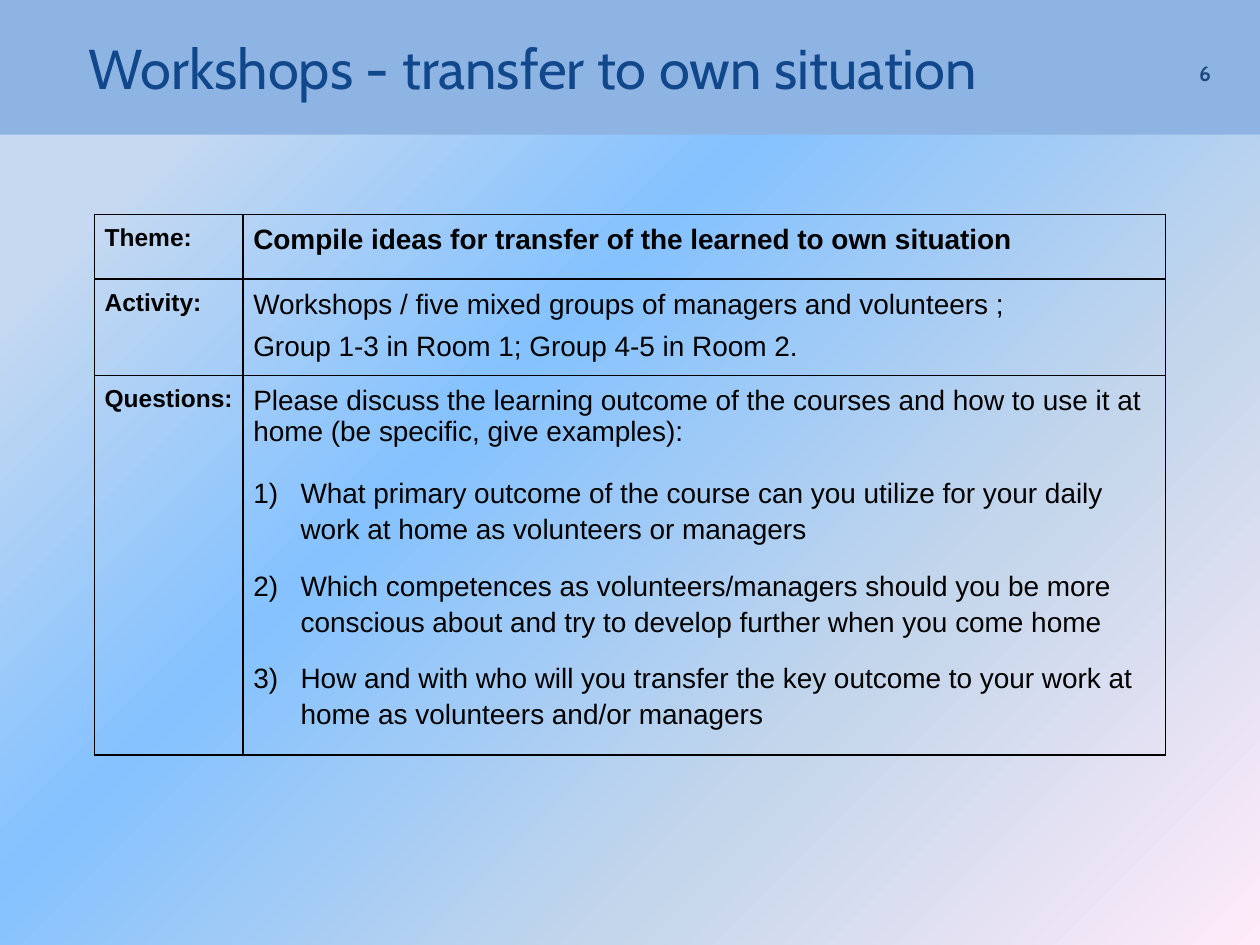
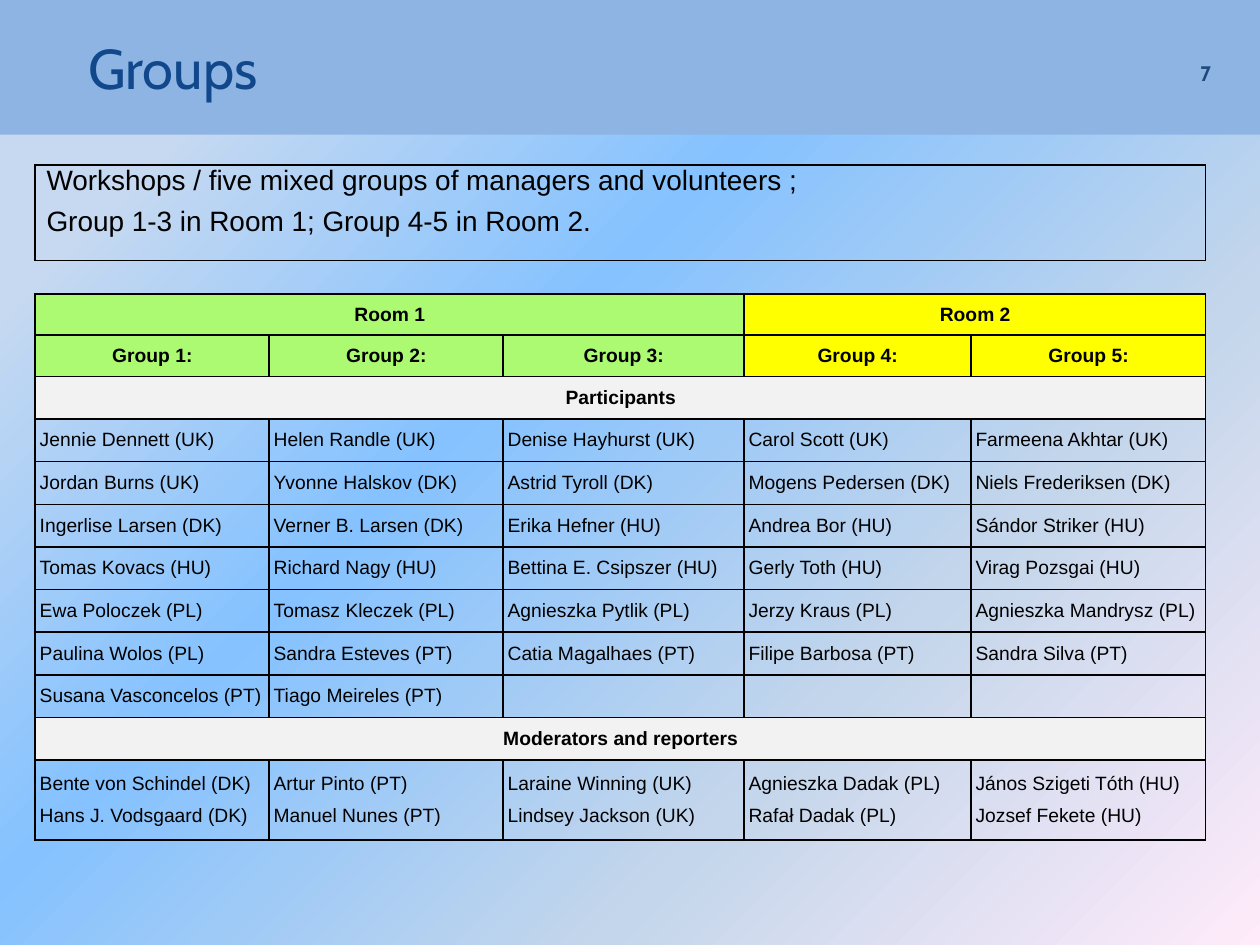
import pptx
import pptx.util
import pptx.dml.color
import pptx.enum.text
import pptx.oxml
import pptx.oxml.ns
import lxml.etree

Pt = pptx.util.Pt
RGBColor = pptx.dml.color.RGBColor
PP_ALIGN = pptx.enum.text.PP_ALIGN
MSO_ANCHOR = pptx.enum.text.MSO_ANCHOR
qn = pptx.oxml.ns.qn

BLACK = RGBColor(0x00, 0x00, 0x00)
TITLE_BLUE = RGBColor(0x11, 0x47, 0x8B)
NUMBER_BLUE = RGBColor(0x1F, 0x49, 0x7D)
BAND_BLUE = RGBColor(0x8E, 0xB4, 0xE3)
ROOM_1_GREEN = RGBColor(0xAC, 0xFA, 0x72)
ROOM_2_YELLOW = RGBColor(0xFF, 0xFF, 0x00)
SECTION_GREY = RGBColor(0xF2, 0xF2, 0xF2)
BACKGROUND_STOPS = [
    (14, RGBColor(0xC6, 0xD9, 0xF1)),
    (40, RGBColor(0x85, 0xC2, 0xFF)),
    (70, RGBColor(0xC4, 0xD6, 0xEB)),
    (100, RGBColor(0xFF, 0xEB, 0xFA)),
]


def write(frame, text, size=16, font="Arial", color=BLACK, bold=False,
          align=PP_ALIGN.LEFT, before=6, after=0, spacing=None, numbered=False):
    """Fill the first paragraph of the frame, or add one below its text."""
    paragraph = frame.add_paragraph() if frame.text else frame.paragraphs[0]
    paragraph.alignment = align
    paragraph.space_before, paragraph.space_after = Pt(before), Pt(after)
    if spacing:
        paragraph.line_spacing = spacing
    if numbered:
        properties = paragraph._p.get_or_add_pPr()
        properties.set("marL", str(Pt(27)))
        properties.set("indent", str(-Pt(27)))
        lxml.etree.SubElement(properties, qn("a:buAutoNum"), type="arabicParenR")
    run = paragraph.add_run()
    run.text = text
    run.font.size, run.font.name, run.font.bold = Pt(size), font, bold
    run.font.color.rgb = color


def add_grid(slide, left, top, widths, heights, margins, anchor):
    """Add an unfilled table with thin black borders."""
    table = slide.shapes.add_table(len(heights), len(widths), Pt(left), Pt(top),
                                   Pt(sum(widths)), Pt(sum(heights))).table
    table.first_row = table.horz_banding = False
    for column, width in zip(table.columns, widths):
        column.width = Pt(width)
    for row, height in zip(table.rows, heights):
        row.height = Pt(height)
    for cell in table.iter_cells():
        (cell.margin_left, cell.margin_top,
         cell.margin_right, cell.margin_bottom) = map(Pt, margins)
        cell.vertical_anchor = anchor
        cell.fill.background()
        for position, side in enumerate(("lnL", "lnR", "lnT", "lnB")):
            cell._tc.get_or_add_tcPr().insert(position, pptx.oxml.parse_xml(
                f'<a:{side} {pptx.oxml.ns.nsdecls("a")} w="{Pt(1)}"><a:solidFill>'
                f'<a:srgbClr val="{BLACK}"/></a:solidFill></a:{side}>'))
    return table


presentation = pptx.Presentation()
presentation.slide_width, presentation.slide_height = Pt(720), Pt(540)

# Shared diagonal background on the master
master = presentation.slide_master
background = master.background.fill
background.gradient()
background.gradient_angle = 315
stop_list = next(master.element.iter(qn("a:gsLst")))
for default_stop in list(stop_list):
    stop_list.remove(default_stop)
for percent, color in BACKGROUND_STOPS:
    stop = lxml.etree.SubElement(stop_list, qn("a:gs"), pos=str(percent * 1000))
    lxml.etree.SubElement(stop, qn("a:srgbClr"), val=str(color))

# Title bands and slide numbers
slides = []
for number, heading in enumerate(["Workshops - transfer to own situation", "Groups"], 6):
    slide = presentation.slides.add_slide(presentation.slide_layouts[5])
    slides.append(slide)
    band = slide.shapes.title
    band.left, band.top, band.width, band.height = Pt(0), Pt(0), Pt(720), Pt(77)
    band.fill.solid()
    band.fill.fore_color.rgb = BAND_BLUE
    band.text_frame.auto_size = pptx.enum.text.MSO_AUTO_SIZE.NONE
    band.text_frame.vertical_anchor = MSO_ANCHOR.MIDDLE
    band.text_frame.margin_left = Pt(50.5)
    write(band.text_frame, heading, size=32, font="Cabin", color=TITLE_BLUE, before=0)

    page = slide.shapes.add_textbox(Pt(654.5), Pt(15), Pt(44.6), Pt(37.5)).text_frame
    page.word_wrap = True
    page.vertical_anchor = MSO_ANCHOR.BOTTOM
    write(page, str(number), size=12, font="Cabin", color=NUMBER_BLUE, bold=True,
          align=PP_ALIGN.RIGHT, before=0)
workshop_slide, groups_slide = slides

# Workshop brief
ARRANGEMENT = ["Workshops / five mixed groups of managers and volunteers ;",
               "Group 1-3 in Room 1; Group 4-5 in Room 2."]
QUESTIONS = [
    "What primary outcome of the course can you utilize for your daily work at home "
    "as volunteers or managers",
    "Which competences as volunteers/managers should you be more conscious about "
    "and try to develop further when you come home",
    "How and with who will you transfer the key outcome to your work at home "
    "as volunteers and/or managers",
]
brief = add_grid(workshop_slide, 54, 122.5, [85, 527], [37, 55, 217],
                 (5.8, 5.8, 5.8, 0), MSO_ANCHOR.TOP)
for row, label in enumerate(["Theme:", "Activity:", "Questions:"]):
    write(brief.cell(row, 0).text_frame, label, size=14, bold=True, after=3)
theme, activity, questions = [brief.cell(row, 1).text_frame for row in range(3)]
write(theme, "Compile ideas for transfer of the learned to own situation", bold=True, after=3)
for line, after in zip(ARRANGEMENT, (0, 3)):
    write(activity, line, after=after)
write(questions, "Please discuss the learning outcome of the courses and how to use it "
      "at home (be specific, give examples):", after=3)
for question, after in zip(QUESTIONS, (0, 0, 6)):
    write(questions, question, before=12, after=after, spacing=1.15, numbered=True)

# Groups by room
PARTICIPANTS = [
    ["Jennie Dennett (UK)", "Helen Randle (UK)", "Denise Hayhurst (UK)",
     "Carol Scott (UK)", "Farmeena Akhtar (UK)"],
    ["Jordan Burns (UK)", "Yvonne Halskov (DK)", "Astrid Tyroll (DK)",
     "Mogens Pedersen (DK)", "Niels Frederiksen (DK)"],
    ["Ingerlise Larsen (DK)", "Verner B. Larsen (DK)", "Erika Hefner (HU)",
     "Andrea Bor (HU)", "Sándor Striker (HU)"],
    ["Tomas Kovacs (HU)", "Richard Nagy (HU)", "Bettina E. Csipszer (HU)",
     "Gerly Toth (HU)", "Virag Pozsgai (HU)"],
    ["Ewa Poloczek (PL)", "Tomasz Kleczek (PL)", "Agnieszka Pytlik (PL)",
     "Jerzy Kraus (PL)", "Agnieszka Mandrysz (PL)"],
    ["Paulina Wolos (PL)", "Sandra Esteves (PT)", "Catia Magalhaes (PT)",
     "Filipe Barbosa (PT)", "Sandra Silva (PT)"],
    ["Susana Vasconcelos (PT)", "Tiago Meireles (PT)"],
]
MODERATORS = [
    ["Bente von Schindel (DK)", "Hans J. Vodsgaard (DK)"],
    ["Artur Pinto (PT)", "Manuel Nunes (PT)"],
    ["Laraine Winning (UK)", "Lindsey Jackson (UK)"],
    ["Agnieszka Dadak (PL)", "Rafał Dadak (PL)"],
    ["János Szigeti Tóth (HU)", "Jozsef Fekete (HU)"],
]
groups = add_grid(groups_slide, 20, 168, [133.7, 133.7, 137.7, 129.7, 134.2],
                  [23.5] * 2 + [24.4] * 9 + [45.7], (2.7, 0, 2.2, 0), MSO_ANCHOR.MIDDLE)

# Heading cells: row, first column, last column, text, fill
headings = [(0, 0, 2, "Room 1", ROOM_1_GREEN), (0, 3, 4, "Room 2", ROOM_2_YELLOW),
            (2, 0, 4, "Participants", SECTION_GREY),
            (10, 0, 4, "Moderators and reporters", SECTION_GREY)]
for column in range(5):
    headings.append((1, column, column, f"Group {column + 1}:",
                     ROOM_1_GREEN if column < 3 else ROOM_2_YELLOW))
for row, first, last, text, fill in headings:
    heading_cell = groups.cell(row, first)
    if last > first:
        heading_cell.merge(groups.cell(row, last))
    heading_cell.fill.solid()
    heading_cell.fill.fore_color.rgb = fill
    write(heading_cell.text_frame, text, size=11, bold=True, align=PP_ALIGN.CENTER)

for row, names in enumerate(PARTICIPANTS, 3):
    for column, name in enumerate(names):
        write(groups.cell(row, column).text_frame, name, size=11)
for column, pair in enumerate(MODERATORS):
    for name, before, after in zip(pair, (3, 6), (0, 3)):
        write(groups.cell(11, column).text_frame, name, size=11, before=before, after=after)

# Arrangement note above the groups
note = add_grid(groups_slide, 20, 94.3, [669], [54.7], (6.6, 0, 2.2, 0), MSO_ANCHOR.TOP)
for line, after in zip(ARRANGEMENT, (0, 3)):
    write(note.cell(0, 0).text_frame, line, after=after)

presentation.save("out.pptx")
